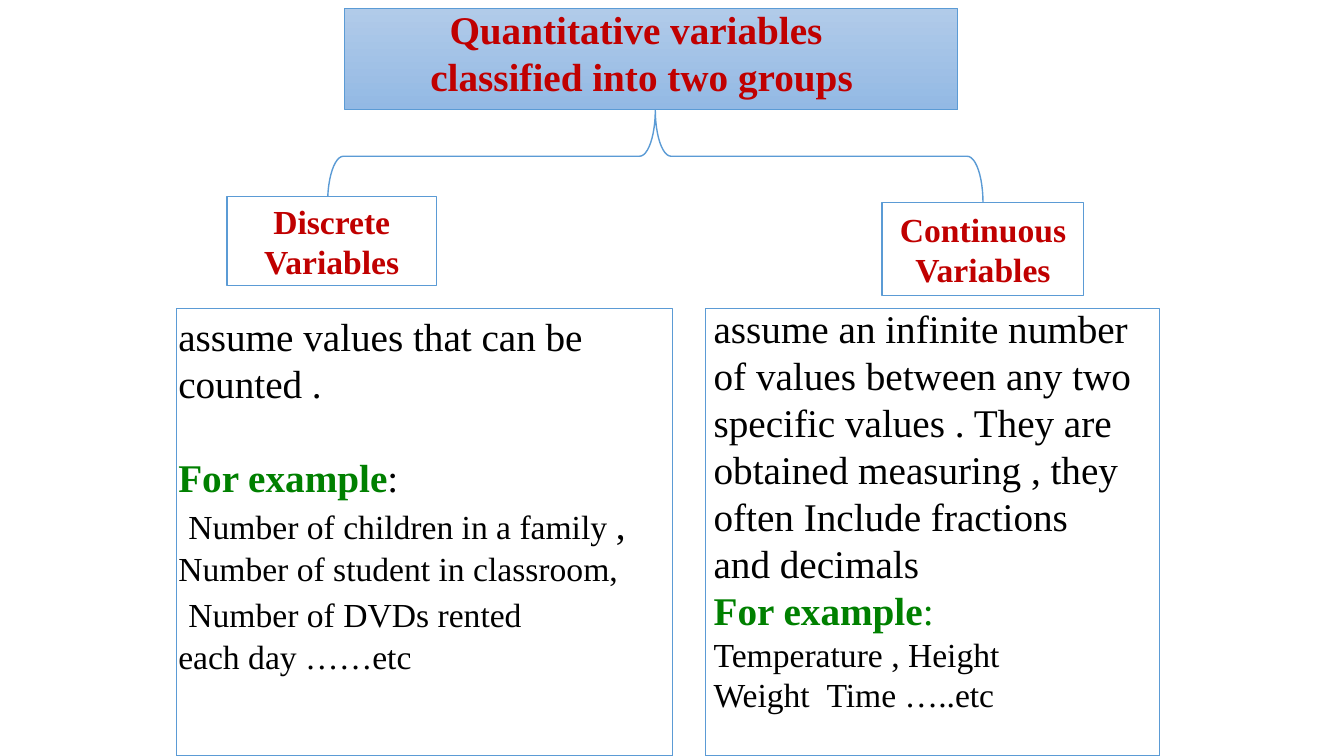
"""Build a slide that splits quantitative variables into two groups."""
import pptx
import pptx.dml.color
import pptx.enum.shapes
import pptx.enum.text
import pptx.util
from lxml import etree

Inches, Pt = pptx.util.Inches, pptx.util.Pt
RGBColor = pptx.dml.color.RGBColor
SHAPES = pptx.enum.shapes.MSO_SHAPE
ALIGN = pptx.enum.text.PP_ALIGN

RED = RGBColor(0xC0, 0x00, 0x00)
GREEN = RGBColor(0x00, 0x80, 0x00)
BLACK = RGBColor(0x00, 0x00, 0x00)
WHITE = RGBColor(0xFF, 0xFF, 0xFF)
BLUE = RGBColor(0x5B, 0x9B, 0xD5)
BANNER_SHADES = (RGBColor(0xB1, 0xCB, 0xE9), RGBColor(0x93, 0xB9, 0xE4))

HEADING = {"name": "Times New Roman", "size": Pt(28), "bold": True}
LABEL = {**HEADING, "size": Pt(24)}
BODY = {**HEADING, "bold": False}
EXAMPLE = {**LABEL, "bold": False}

BANNER = (3.42, 0.08, 6.08, 1.01)
BRACE = (6.04, -1.7, 0.92, 6.5)
GROUPS = [
    ((2.25, 1.95, 2.08, 0.88), "Discrete Variables"),
    ((8.75, 2.01, 2, 0.92), "Continuous Variables"),
]
PANELS = [(1.75, 3.06, 4.92, 4.44), (7, 3.06, 4.5, 4.44)]

TEXTS = [
    ((4.17, 0, 5, 1.04), [
        ([("Quantitative variables classified into two groups", HEADING, RED)],
         {"indent": 0.19}),
    ]),
    ((1.67, 3.05, 5.42, 3.74), [
        ([("assume values that can be counted .", BODY, BLACK)], {}),
        ([("For example", HEADING, GREEN), (":", BODY, BLACK)],
         {"before": 33.6}),
        ([("Number of children in a family ", EXAMPLE, BLACK),
          (",", BODY, BLACK)], {"indent": 0.1}),
        ([("Number of student in classroom,", EXAMPLE, BLACK)], {}),
        ([("Number of DVDs rented", EXAMPLE, BLACK)],
         {"indent": 0.1, "before": 4.3, "after": 1.4}),
        ([("each day ……etc", EXAMPLE, BLACK)], {}),
    ]),
    ((6.98, 2.97, 4.34, 4.21), [
        ([("assume an infinite number of values between any two",
           BODY, BLACK)], {}),
        ([("specific values . They are obtained measuring , they often "
           "Include fractions and decimals", BODY, BLACK)], {}),
        ([("For example", HEADING, GREEN), (":", BODY, GREEN)], {}),
        ([("Temperature , Height", EXAMPLE, BLACK)], {}),
        ([("Weight\tTime …..etc", EXAMPLE, BLACK)], {"tab": 1.12}),
    ]),
]


def add_outlined(slide, preset, place, width=1):
    outlined = slide.shapes.add_shape(preset, *map(Inches, place))
    outlined.shadow.inherit = False
    outlined.fill.solid()
    outlined.fill.fore_color.rgb = WHITE
    outlined.line.color.rgb = BLUE
    outlined.line.width = Pt(width)
    return outlined


def add_run(paragraph, words, style, color):
    run = paragraph.add_run()
    run.text = words
    for attribute, value in style.items():
        setattr(run.font, attribute, value)
    run.font.color.rgb = color


def set_layout(paragraph, layout):
    properties = paragraph._p.get_or_add_pPr()
    if "tab" in layout:
        tabs = etree.SubElement(properties, pptx.oxml.ns.qn("a:tabLst"))
        etree.SubElement(tabs, pptx.oxml.ns.qn("a:tab"),
                         pos=str(Inches(layout["tab"])), algn="l")
    if "indent" in layout:
        properties.set("marL", "0")
        properties.set("indent", str(Inches(layout["indent"])))
    for side in ("before", "after"):
        if side in layout:
            setattr(paragraph, "space_" + side, Pt(layout[side]))


def add_text(slide, place, paragraphs):
    frame = slide.shapes.add_textbox(*map(Inches, place)).text_frame
    frame.word_wrap = True
    for index, (runs, layout) in enumerate(paragraphs):
        paragraph = frame.add_paragraph() if index else frame.paragraphs[0]
        paragraph.alignment = ALIGN.LEFT
        set_layout(paragraph, layout)
        for run in runs:
            add_run(paragraph, *run)


def main():
    deck = pptx.Presentation()
    deck.slide_width, deck.slide_height = Inches(13.33), Inches(7.5)
    slide = deck.slides.add_slide(deck.slide_layouts[6])

    banner = add_outlined(slide, SHAPES.RECTANGLE, BANNER, 0.5)
    banner.fill.gradient()
    banner.fill.gradient_angle = 270
    for stop, shade in zip(banner.fill.gradient_stops, BANNER_SHADES):
        stop.color.rgb = shade

    brace = add_outlined(slide, SHAPES.RIGHT_BRACE, BRACE)
    brace.rotation = 270
    brace.adjustments[0] = 0.17
    brace.adjustments[1] = 0.5

    for place, name in GROUPS:
        group = add_outlined(slide, SHAPES.RECTANGLE, place)
        group.text_frame.word_wrap = True
        group.text_frame.vertical_anchor = pptx.enum.text.MSO_ANCHOR.MIDDLE
        paragraph = group.text_frame.paragraphs[0]
        paragraph.alignment = ALIGN.CENTER
        add_run(paragraph, name, LABEL, RED)

    for place in PANELS:
        add_outlined(slide, SHAPES.RECTANGLE, place)
    for place, paragraphs in TEXTS:
        add_text(slide, place, paragraphs)

    deck.save("out.pptx")


if __name__ == "__main__":
    main()
